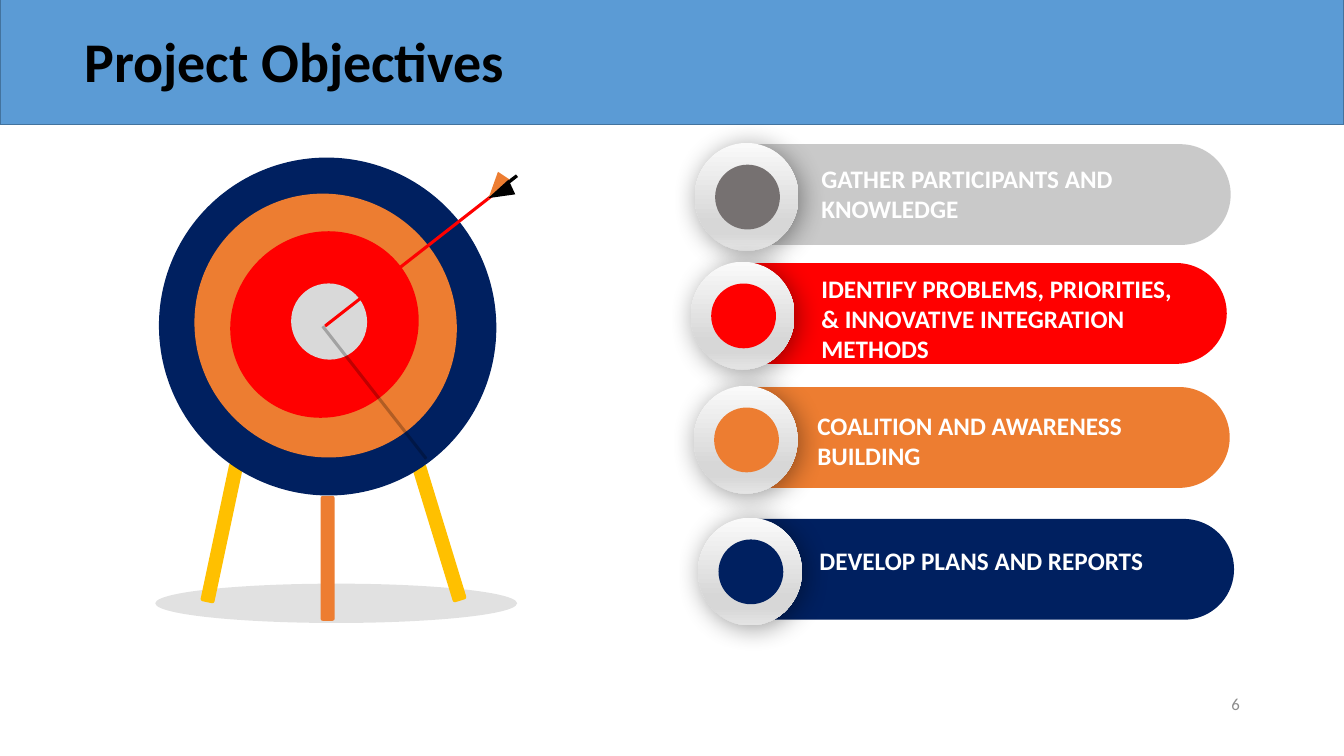
from pptx import Presentation
from pptx.dml.color import RGBColor
from pptx.enum.shapes import MSO_SHAPE as Shape
from pptx.enum.text import MSO_ANCHOR as Anchor, PP_ALIGN as Align
from pptx.oxml import parse_xml
from pptx.oxml.ns import nsdecls, qn
from pptx.util import Pt

COLORS = {
    "sky": "5B9BD5", "steel": "43739E", "black": "000000", "soot": "0D0D0D",
    "white": "FFFFFF", "navy": "002060", "orange": "ED7D31", "red": "FF0000",
    "gold": "FFC000", "silver": "D9D9D9", "gray": "BFBFBF", "stone": "767171",
    "number": "8C8C8C",
}
DISC_STOPS = [(0, "FAFAFA"), (74, "D7D7D7"), (83, "D7D7D7"), (100, "E4E4E4")]


class SlidePainter:
    font = "Calibri"

    def __init__(self, page):
        self.page = page

    def color(self, name):
        return RGBColor.from_string(COLORS[name])

    def paint(self, shape, fill, opacity=100, line=None):
        shape.shadow.inherit = False
        shape.fill.solid()
        shape.fill.fore_color.rgb = self.color(fill)
        if opacity < 100:
            tint = shape.fill._xPr.find(qn("a:solidFill"))[0]
            tint.append(parse_xml(f'<a:alpha {nsdecls("a")} val="{opacity * 1000}"/>'))
        if line:
            shape.line.color.rgb = self.color(line)
            shape.line.width = Pt(1)
        else:
            shape.line.fill.background()
        return shape

    def shape(self, kind, left, top, width, height, fill, turn=0, opacity=100, line=None):
        shape = self.page.shapes.add_shape(kind, Pt(left), Pt(top), Pt(width), Pt(height))
        shape.rotation = turn
        return self.paint(shape, fill, opacity, line)

    def polygon(self, points, fill):
        start, *rest = [(Pt(x), Pt(y)) for x, y in points]
        builder = self.page.shapes.build_freeform(*start)
        builder.add_line_segments(rest, close=True)
        return self.paint(builder.convert_to_shape(), fill)

    def pill(self, left, top, fill, opacity):
        bar = self.shape(Shape.ROUNDED_RECTANGLE, left, top, 377.3, 72, fill, opacity=opacity)
        bar.adjustments[0] = 0.5

    def disc(self, left, top):
        disc = self.shape(Shape.OVAL, left, top, 74.2, 77, "silver")
        disc.fill.gradient()
        disc.fill.gradient_angle = 270
        properties = disc._element.spPr
        stops = properties.find(qn("a:gradFill")).find(qn("a:gsLst"))
        for stop in list(stops):
            stops.remove(stop)
        for position, tone in DISC_STOPS:
            stops.append(parse_xml(
                f'<a:gs {nsdecls("a")} pos="{position * 1000}"><a:srgbClr val="{tone}"/></a:gs>'))
        properties.find(qn("a:effectLst")).append(parse_xml(
            f'<a:outerShdw {nsdecls("a")} blurRad="{Pt(19)}" dist="{Pt(3)}" dir="2700000" '
            'algn="tl" rotWithShape="0"><a:srgbClr val="000000"><a:alpha val="40000"/>'
            '</a:srgbClr></a:outerShdw>'))

    def text(self, words, left, top, width, height, size, color,
             bold=True, anchor=Anchor.TOP, align=Align.LEFT, spacing=1.0):
        box = self.page.shapes.add_textbox(Pt(left), Pt(top), Pt(width), Pt(height))
        frame = box.text_frame
        frame.word_wrap = True
        frame.vertical_anchor = anchor
        para = frame.paragraphs[0]
        para.text = words
        para.alignment = align
        para.line_spacing = spacing
        para.font.name = self.font
        para.font.size = Pt(size)
        para.font.bold = bold
        para.font.color.rgb = self.color(color)

    def objective(self, left, top, bar, dot, opacity, words, text_box):
        self.pill(left, top, bar, opacity)
        self.disc(left - 5.6, top - 0.9)
        self.shape(Shape.OVAL, left + 9, top + 14.6, 46.3, 46.3, dot)
        self.text(words, *text_box, 18, "white")


LEGS = [
    (308.9, 330.5, 100.8, 343, "gold"),
    (153.4, 330.5, 100.8, 12, "gold"),
    (229, 354.2, 89.3, 0, "orange"),
]
RINGS = [
    (113.8, 112.3, 240.5, 241.9, "navy"),
    (139.7, 137.5, 185.8, 190.1, "orange"),
    (163.4, 166.3, 136.8, 131, "red"),
    (208.1, 202.3, 54, 54.7, "silver"),
]
OBJECTIVES = [
    (501.8, 103, "gray", "stone", 84, "GATHER PARTICIPANTS AND KNOWLEDGE",
     (579.6, 113, 287.3, 51.1)),
    (499, 187.9, "red", "red", 100,
     "IDENTIFY PROBLEMS, PRIORITIES, & INNOVATIVE INTEGRATION METHODS",
     (579.6, 191.5, 277.2, 72.7)),
    (501.1, 276.5, "orange", "orange", 100, "COALITION AND AWARENESS BUILDING",
     (576.7, 289.4, 277.2, 51.1)),
    (504.2, 370.7, "navy", "navy", 100, "DEVELOP PLANS AND REPORTS",
     (578.2, 385.9, 286.6, 28.8)),
]


def draw_target(painter):
    painter.shape(Shape.OVAL, 110.9, 416.9, 258.5, 28.1, "soot", opacity=12)
    for left, top, height, turn, fill in LEGS:
        painter.shape(Shape.FLOWCHART_ALTERNATE_PROCESS, left, top, 10.1, height, fill, turn)
    painter.polygon([(360, 131), (368.6, 124.6), (370.1, 126.4), (361.4, 133.2)], "black")
    for left, top, width, height, fill in RINGS:
        painter.shape(Shape.OVAL, left, top, width, height, fill, 322)
    painter.shape(Shape.ROUNDED_RECTANGLE, 266.4, 220.3, 2.2, 120.2, "black", 322, 25)
    painter.shape(Shape.ROUNDED_RECTANGLE, 295.2, 101.5, 2.2, 162.7, "red", 52)
    painter.shape(Shape.ISOSCELES_TRIANGLE, 349.2, 123.8, 10.1, 20.2, "orange", 213.7)
    painter.shape(Shape.ISOSCELES_TRIANGLE, 351.4, 128.2, 11.5, 18.7, "black", 244.9)


def main():
    deck = Presentation()
    deck.slide_width, deck.slide_height = Pt(960), Pt(540)
    painter = SlidePainter(deck.slides.add_slide(deck.slide_layouts[6]))
    painter.shape(Shape.RECTANGLE, 0, -0.5, 960, 89.3, "sky", line="steel")
    painter.text("Project Objectives", 53.3, 15.1, 828, 61.9, 40, "black",
                 anchor=Anchor.MIDDLE, spacing=0.9)
    draw_target(painter)
    for objective in OBJECTIVES:
        painter.objective(*objective)
    painter.text("6", 854.6, 488.2, 38.2, 28.8, 12, "number", bold=False,
                 anchor=Anchor.MIDDLE, align=Align.RIGHT)
    deck.save("out.pptx")


if __name__ == "__main__":
    main()
